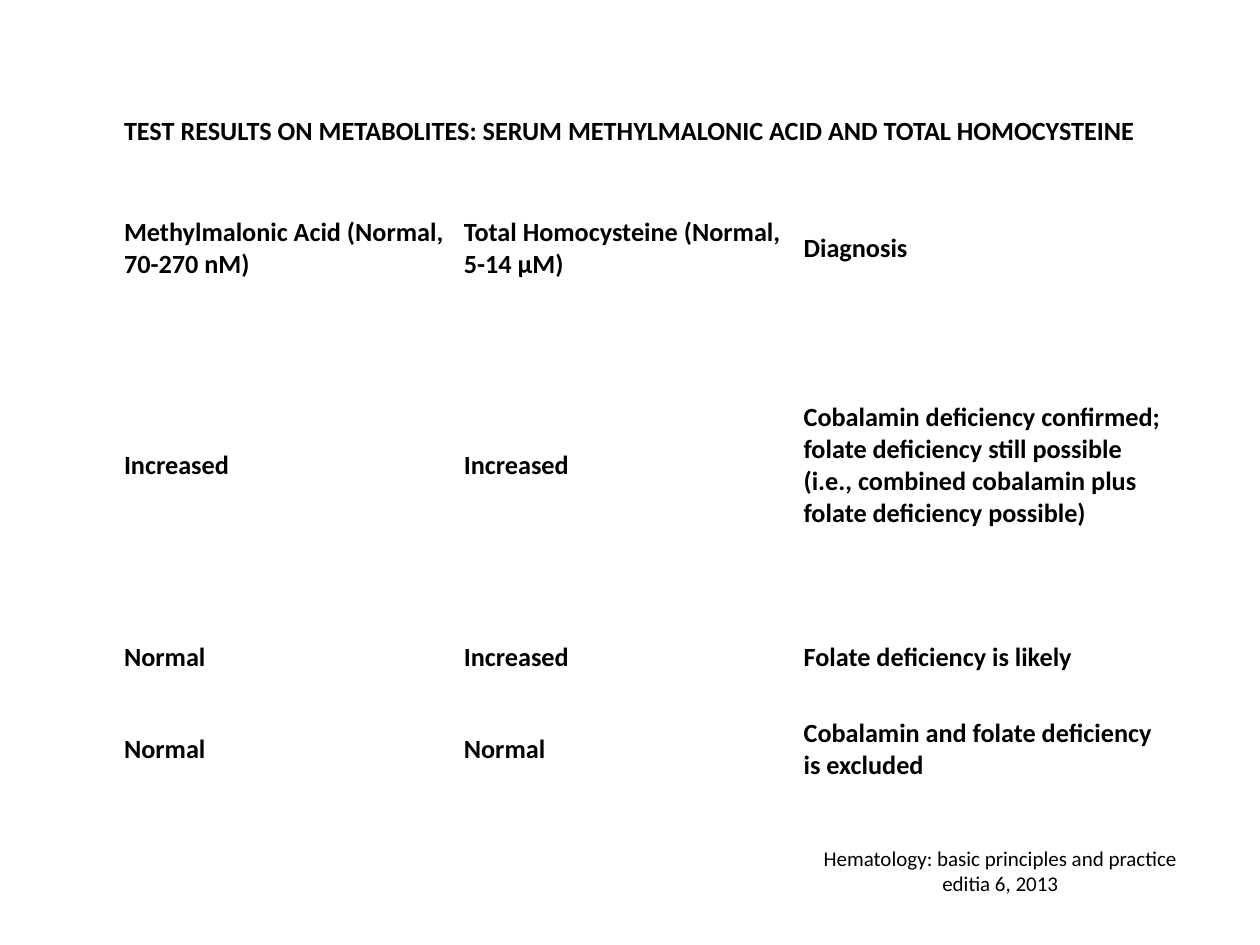
import pptx
import pptx.util
import pptx.dml.color
import pptx.enum.text
from dataclasses import dataclass

Cm = pptx.util.Cm
Pt = pptx.util.Pt


@dataclass
class Theme:
    font: str = "Calibri"
    ink: str = "000000"
    body: int = 15
    note: int = 12


theme = Theme()


def add_run(para, text, size, bold=False):
    run = para.add_run()
    run.text = text
    run.font.name = theme.font
    run.font.size = Pt(size)
    run.font.bold = bold
    run.font.color.rgb = pptx.dml.color.RGBColor.from_string(theme.ink)


# Slide
deck = pptx.Presentation()
deck.slide_width, deck.slide_height = Cm(25.4), Cm(19.05)
slide = deck.slides.add_slide(deck.slide_layouts[6])

# Table of test results, headed by one merged row
rows = [
    ["TEST RESULTS ON METABOLITES: SERUM METHYLMALONIC ACID AND TOTAL HOMOCYSTEINE"],
    ["Methylmalonic Acid (Normal, 70-270 nM)",
     "Total Homocysteine (Normal, 5-14 µM)", "Diagnosis"],
    ["Increased", "Increased",
     "Cobalamin deficiency confirmed; folate deficiency still possible "
     "(i.e., combined cobalamin plus folate deficiency possible)"],
    ["Normal", "Increased", "Folate deficiency is likely"],
    ["Normal", "Normal", "Cobalamin and folate deficiency is excluded"],
]
widths = [6.85, 6.85, 7.68]
heights = [2.35, 2.35, 6.4, 1.35, 2.35]

table = slide.shapes.add_table(
    len(rows), len(widths), Cm(2.33), Cm(1.48),
    Cm(sum(widths)), Cm(sum(heights))).table
table.first_row = False
table.horz_banding = False
for col, width in zip(table.columns, widths):
    col.width = Cm(width)
for row, height in zip(table.rows, heights):
    row.height = Cm(height)
table.cell(0, 0).merge(table.cell(0, 2))

for cell in table.iter_cells():
    cell.fill.background()
    cell.vertical_anchor = pptx.enum.text.MSO_ANCHOR.MIDDLE
    cell.margin_left = cell.margin_right = Cm(0.17)
    cell.margin_top = cell.margin_bottom = Cm(0.08)

for r, texts in enumerate(rows):
    for c, text in enumerate(texts):
        para = table.cell(r, c).text_frame.paragraphs[0]
        add_run(para, text, theme.body, bold=True)

# Source note
note = slide.shapes.add_textbox(Cm(16.3), Cm(16.92), Cm(7.73), Cm(1.28))
frame = note.text_frame
frame.word_wrap = False
frame.auto_size = pptx.enum.text.MSO_AUTO_SIZE.SHAPE_TO_FIT_TEXT
lines = ["Hematology: basic principles and practice", "editia 6, 2013"]
for i, line in enumerate(lines):
    para = frame.add_paragraph() if i else frame.paragraphs[0]
    para.alignment = pptx.enum.text.PP_ALIGN.CENTER
    add_run(para, line, theme.note)

deck.save("out.pptx")
